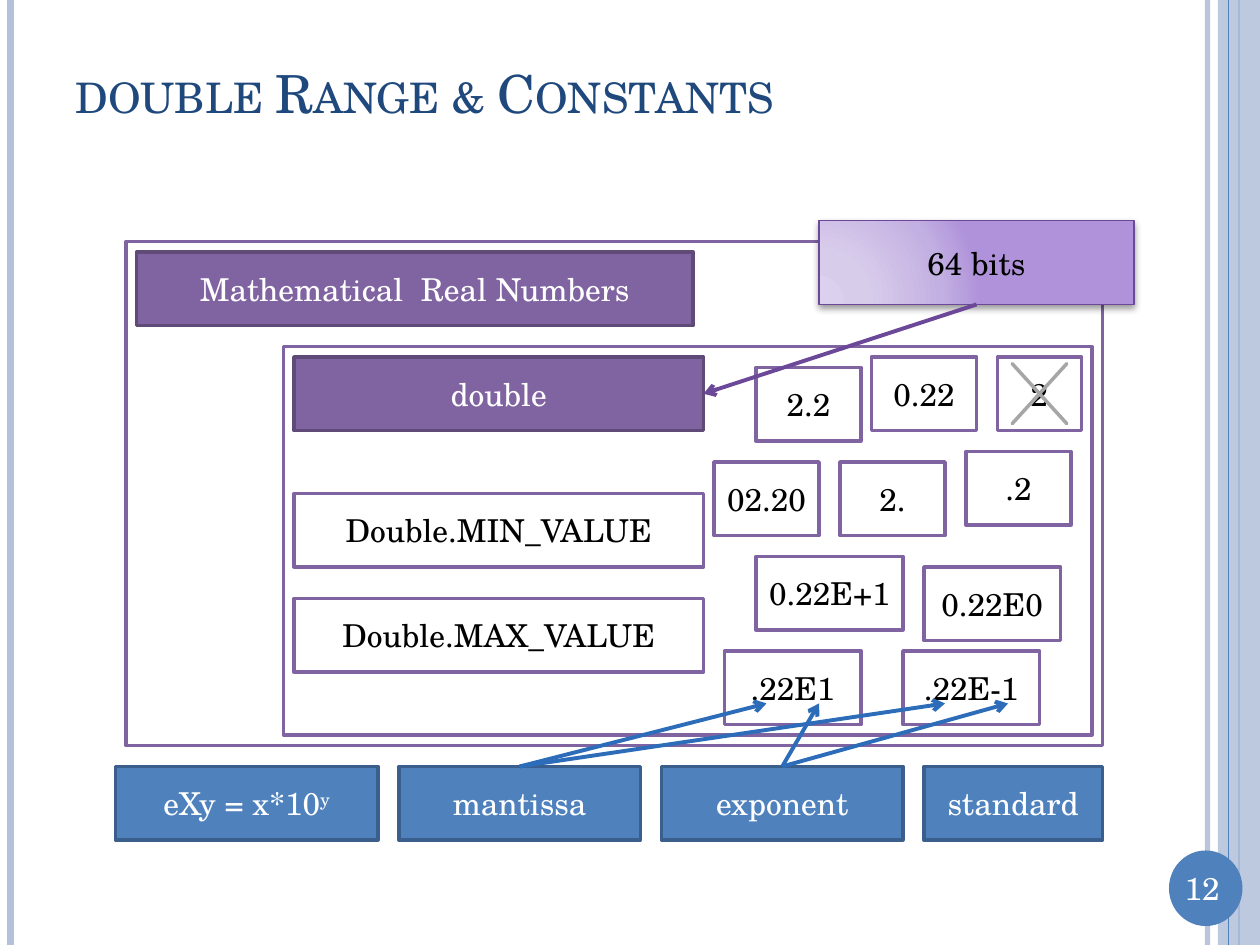
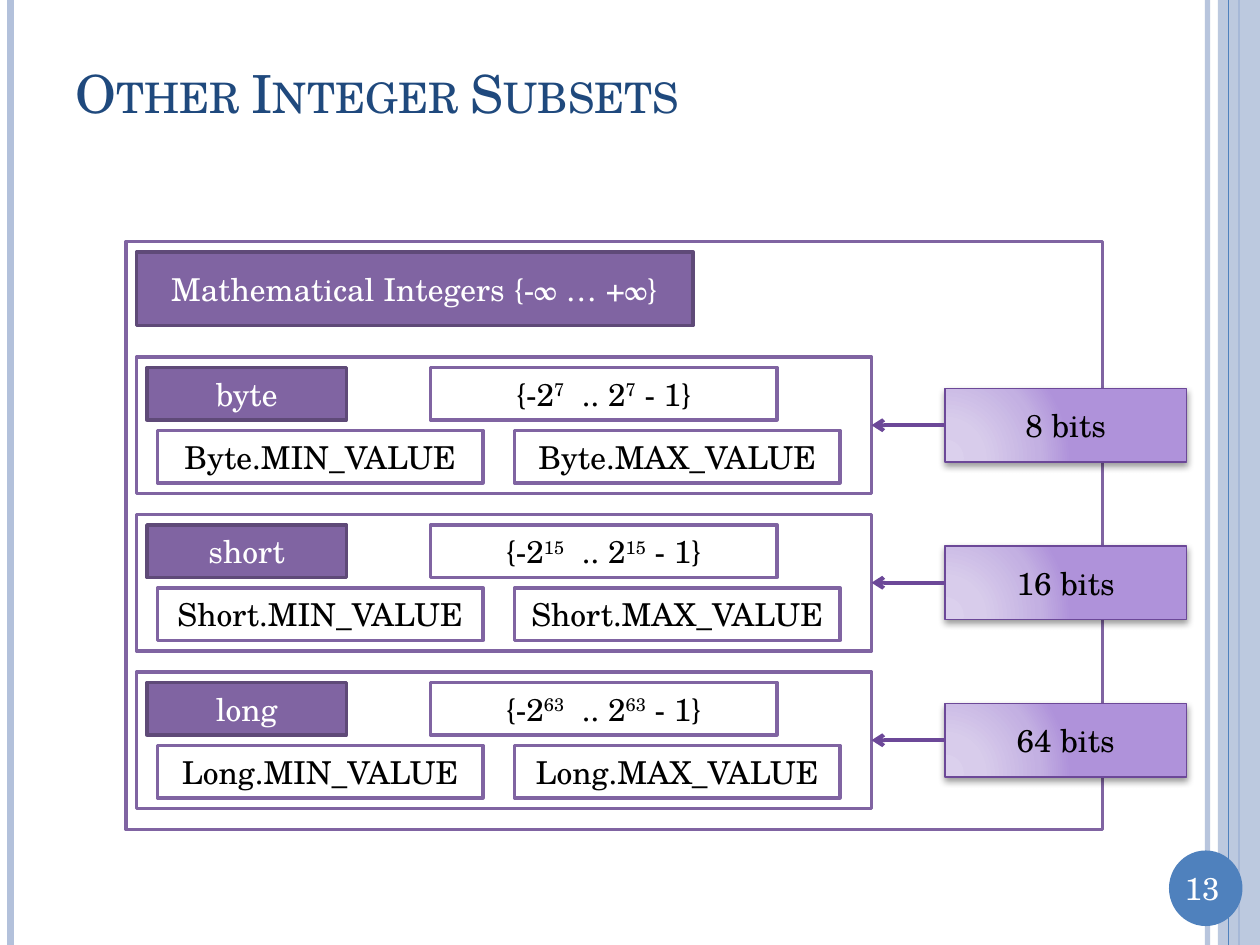
from lxml import etree
from pptx import Presentation
from pptx import util as u
from pptx.dml import color as dml_color
from pptx.enum import shapes, text
from pptx.oxml import ns

# Shared look
FONT = "TeX Gyre Schola"
WHITE, BLACK = "FFFFFF", "000000"
NAVY, BLUE, BLUE_EDGE, BLUE_ARROW = "1F497D", "4F81BD", "3A5F8C", "2C6CB9"
PURPLE, PURPLE_EDGE, PURPLE_ARROW = "8064A2", "5F4A78", "6C4898"
BAND = "B3C1DB"
GLOW_STOPS = [(0, "DBD0ED"), (30, "D8CCEB"), (75, "C3B0E2"), (100, "AF92DA")]

# Box styles: fill, edge, text colour
OUTLINED = (WHITE, PURPLE, BLACK)
HEADING = (PURPLE, PURPLE_EDGE, WHITE)
NOTE = (BLUE, BLUE_EDGE, WHITE)

WIDTH, HEIGHT = 720, 540
BOX_HEIGHT = 42


def points(*values):
    return [u.Pt(value) for value in values]


def rgb(code):
    return dml_color.RGBColor.from_string(code)


def add_child(parent, tag, **attributes):
    return etree.SubElement(parent, ns.qn(tag), attributes)


def set_alpha(element, percent):
    """Make the colour inside a fill or line partly transparent."""
    colour = next(element.iter(ns.qn("a:srgbClr")))
    add_child(colour, "a:alpha", val=str(percent * 1000))


def write(frame, runs, colour, size=18, align=text.PP_ALIGN.CENTER):
    """Write runs into the first paragraph; every second run is superscript."""
    frame.word_wrap = True
    paragraph = frame.paragraphs[0]
    paragraph.alignment = align
    for index, words in enumerate(runs):
        run = paragraph.add_run()
        run.text = words
        run.font.name, run.font.size = FONT, u.Pt(size)
        run.font.color.rgb = rgb(colour)
        if index % 2:
            run.font._element.set("baseline", "30000")
    return paragraph


def add_plain(slide, kind, place, fill, edge=None, weight=2):
    shape = slide.shapes.add_shape(kind, *points(*place))
    shape.shadow.inherit = False
    shape.fill.solid()
    shape.fill.fore_color.rgb = rgb(fill)
    if edge:
        shape.line.color.rgb = rgb(edge)
        shape.line.width = u.Pt(weight)
    else:
        shape.line.fill.background()
    return shape


def add_box(slide, place, style, *runs):
    fill, edge, colour = style
    shape = add_plain(slide, shapes.MSO_SHAPE.RECTANGLE, place, fill, edge)
    shape.text_frame.vertical_anchor = text.MSO_ANCHOR.MIDDLE
    if runs:
        write(shape.text_frame, runs, colour)
    return shape


def add_size_tag(slide, place, label):
    """Glowing, shadowed box that names a size in bits."""
    shape = add_box(slide, place, (WHITE, PURPLE_ARROW, BLACK), label)
    shape.line.width = u.Pt(1)

    properties = shape._element.spPr
    gradient = etree.Element(ns.qn("a:gradFill"), rotWithShape="1")
    stops = add_child(gradient, "a:gsLst")
    for position, colour in GLOW_STOPS:
        stop = add_child(stops, "a:gs", pos=str(position * 1000))
        add_child(stop, "a:srgbClr", val=colour)
    circle = add_child(gradient, "a:path", path="circle")
    add_child(circle, "a:fillToRect", l="5000", t="100000", r="120000", b="10000")
    properties.replace(properties.find(ns.qn("a:solidFill")), gradient)

    shadow = add_child(properties.find(ns.qn("a:effectLst")), "a:outerShdw",
                       blurRad=str(u.Pt(4)), dist=str(u.Pt(2)),
                       dir="5400000", rotWithShape="0")
    add_child(shadow, "a:srgbClr", val=BLACK)
    set_alpha(shadow, 40)


def add_line(slide, start, end, colour, weight, arrow=False):
    line = slide.shapes.add_connector(
        shapes.MSO_CONNECTOR.STRAIGHT, *points(*start, *end))
    line.line.color.rgb = rgb(colour)
    line.line.width = u.Pt(weight)
    add_child(line._element.spPr, "a:effectLst")
    if arrow:
        add_child(line.line._get_or_add_ln(), "a:tailEnd", type="arrow")
    return line


def add_arrow(slide, start, end, colour=PURPLE_ARROW):
    add_line(slide, start, end, colour, 2.25, arrow=True)


def add_rule(slide, x, colour, weight):
    return add_line(slide, (x, 0), (x, HEIGHT), colour, weight)


def add_base_slide(presentation, title, number):
    """Blank slide with side bands, number badge and title."""
    slide = presentation.slides.add_slide(presentation.slide_layouts[6])
    inner_rule = add_rule(slide, 690, BAND, 3)
    set_alpha(inner_rule.line._get_or_add_ln(), 93)
    add_rule(slide, 6, BAND, 4.5)
    add_rule(slide, 708, BLUE, 1.5)
    band = add_plain(slide, shapes.MSO_SHAPE.RECTANGLE, (696, 0, 24, HEIGHT), BAND)
    set_alpha(band._element.spPr, 87)
    add_rule(slide, 702, BLUE, 0.75)

    add_plain(slide, shapes.MSO_SHAPE.OVAL, (668, 486, 42, 43.2), BLUE)
    badge = slide.shapes.add_textbox(*points(666, 493.2, 42, 29))
    write(badge.text_frame, [str(number)], WHITE)

    heading = slide.shapes.add_textbox(*points(36, 21.6, 624, 62.6))
    heading.text_frame.vertical_anchor = text.MSO_ANCHOR.MIDDLE
    paragraph = write(heading.text_frame, [title], NAVY, 30, text.PP_ALIGN.LEFT)
    paragraph.runs[0].font._element.set("cap", "small")
    return slide


def add_number_set(slide, height, name):
    """Large frame for a mathematical set, with its name on top."""
    add_box(slide, (72, 138, 558, height), OUTLINED)
    add_box(slide, (78, 144, 318, BOX_HEIGHT), HEADING, name)


def build_double_slide(presentation):
    slide = add_base_slide(presentation, "double Range & Constants", 12)
    add_number_set(slide, 288, "Mathematical  Real Numbers")

    # The double subset and its constants
    add_box(slide, (162, 198, 462, 222), OUTLINED)
    for top, style, label in [(204, HEADING, "double"),
                              (282, OUTLINED, "Double.MIN_VALUE"),
                              (342, OUTLINED, "Double.MAX_VALUE")]:
        add_box(slide, (168, top, 234, BOX_HEIGHT), style, label)

    # Literals
    literals = [("2.2", 432, 210, 60), ("0.22", 498, 204, 60),
                (".2", 552, 258, 60), ("02.20", 408, 264, 60),
                ("2.", 480, 264, 60), ("0.22E0", 528, 324, 78),
                ("0.22E+1", 432, 318, 84), (".22E1", 414, 372, 78),
                (".22E-1", 516, 372, 78), ("2", 570, 204, 48)]
    for label, left, top, width in literals:
        add_box(slide, (left, top, width, BOX_HEIGHT), OUTLINED, label)
    cross = add_plain(slide, shapes.MSO_SHAPE.MATH_MULTIPLY,
                      (564, 192, 60, 66), "D9D9D9", "A6A6A6")
    cross.adjustments[0] = 0

    # Notation notes along the bottom, with arrows to the parts they name
    notes_top, gap, left = 438, 12, 66
    notes = [(150, ["eXy = x*10", "y"], []),
             (138, ["mantissa"], [438, 540]),
             (138, ["exponent"], [468, 576]),
             (102, ["standard"], [])]
    for width, runs, targets in notes:
        add_box(slide, (left, notes_top, width, BOX_HEIGHT), NOTE, *runs)
        for target in targets:
            add_arrow(slide, (left + width / 2, notes_top), (target, 402), BLUE_ARROW)
        left += width + gap

    add_size_tag(slide, (468, 126, 180, 48), "64 bits")
    add_arrow(slide, (558, 174), (402, 225))


def add_integer_type(slide, top, name, exponent, bits):
    """Framed integer type with its range, constants and size."""
    add_box(slide, (78, top, 420, 78), OUTLINED)
    add_box(slide, (84, top + 6, 114, 30), HEADING, name)
    add_box(slide, (246, top + 6, 198, 30), OUTLINED,
            "{-2", exponent, "  .. 2", exponent, " - 1}")
    for left, limit in [(90, "MIN"), (294, "MAX")]:
        add_box(slide, (left, top + 42, 186, 30), OUTLINED,
                f"{name.capitalize()}.{limit}_VALUE")
    add_size_tag(slide, (540, top + 18, 138, BOX_HEIGHT), f"{bits} bits")
    add_arrow(slide, (540, top + 39), (498, top + 39))


def build_integer_slide(presentation):
    slide = add_base_slide(presentation, "Other Integer Subsets", 13)
    add_number_set(slide, 336, "Mathematical Integers {-∞ … +∞}")
    types = [("byte", 8), ("short", 16), ("long", 64)]
    for row, (name, bits) in enumerate(types):
        add_integer_type(slide, 204 + 90 * row, name, str(bits - 1), bits)


def main():
    presentation = Presentation()
    presentation.slide_width, presentation.slide_height = points(WIDTH, HEIGHT)
    build_double_slide(presentation)
    build_integer_slide(presentation)
    presentation.save("out.pptx")


if __name__ == "__main__":
    main()
